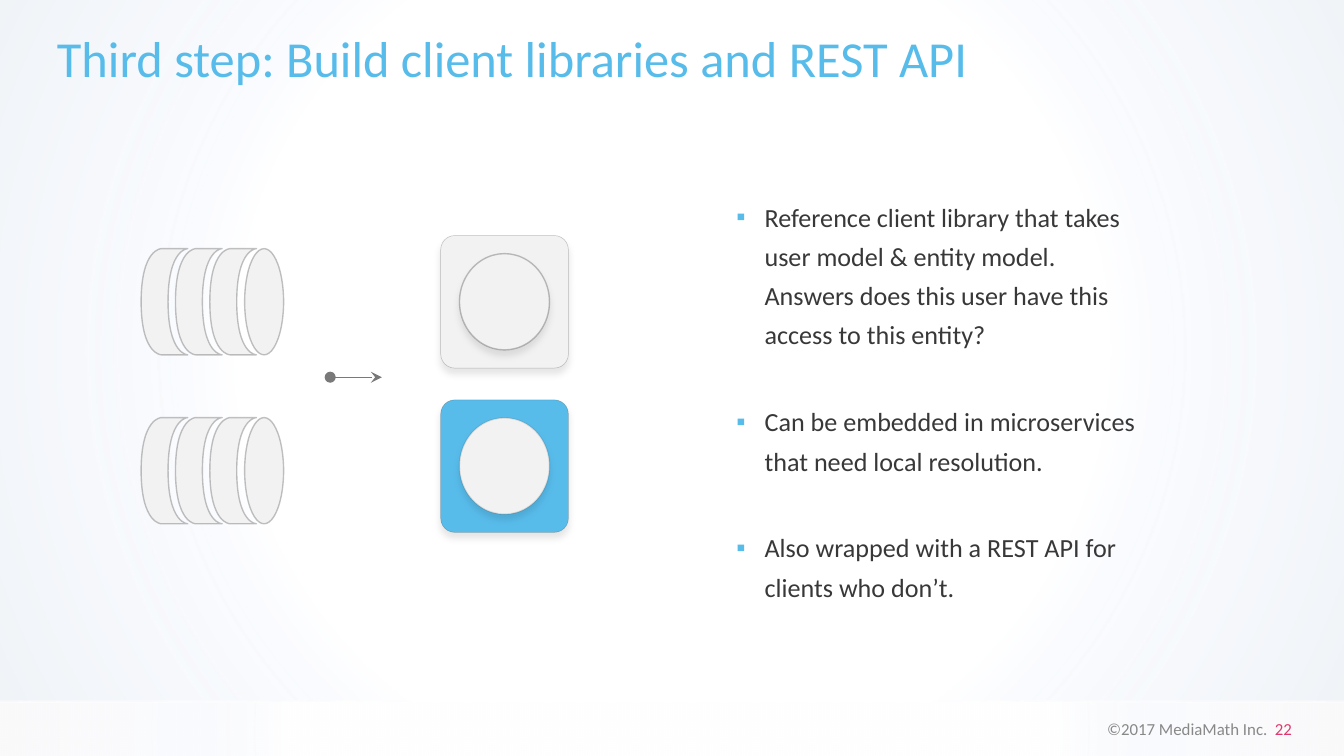
from dataclasses import dataclass
from typing import Any

from lxml.etree import SubElement
from pptx import Presentation
from pptx.dml.color import RGBColor
from pptx.enum.shapes import MSO_CONNECTOR as Link, MSO_SHAPE as Kind
from pptx.enum.text import MSO_ANCHOR as Anchor, PP_ALIGN as Align
from pptx.oxml.ns import qn
from pptx.util import Pt

WHITE = RGBColor(0xFF, 0xFF, 0xFF)
MIST = RGBColor(0xF0, 0xF4, 0xFC)
HAZE = RGBColor(0xE3, 0xEB, 0xF2)
LILAC = RGBColor(0xF0, 0xEE, 0xF2)
PALE = RGBColor(0xF2, 0xF2, 0xF2)
SKY = RGBColor(0x58, 0xBC, 0xEB)
PINK = RGBColor(0xDE, 0x39, 0x6E)
GREY = RGBColor(0x88, 0x88, 0x88)
ARROW = RGBColor(0x79, 0x79, 0x79)
TEXT = RGBColor(0x38, 0x38, 0x38)
EDGE = RGBColor(0x2A, 0x2A, 0x2A)
BLACK = RGBColor(0, 0, 0)

WIDTH, HEIGHT = 720, 405
CYLINDER_TOPS = (133.2, 223.7)
CYLINDER_HEIGHT = 56.9
BAND_LEFT, BAND_STEP, BAND_COUNT, BAND_WIDTH = 75.6, 18.4, 3, 25
POINTS = (
    "Reference client library that takes user model & entity model.  "
    "Answers does this user have this access to this entity?",
    "Can be embedded in microservices that need local resolution.",
    "Also wrapped with a REST API for clients who don’t.",
)


@dataclass(frozen=True)
class Box:
    left: float
    top: float
    width: float
    height: float

    def lengths(self) -> tuple:
        return tuple(Pt(v) for v in (self.left, self.top, self.width, self.height))


@dataclass(frozen=True)
class Stop:
    percent: int
    color: RGBColor
    opacity: int = 100


@dataclass(frozen=True)
class Tile:
    top: float
    fill: RGBColor
    ring_opacity: int


BACKDROPS = (
    (Box(-0.7, 376.5, 720.7, 29.5),
     (Stop(57, WHITE), Stop(78, MIST, 29), Stop(99, LILAC, 30))),
    (Box(-0.7, 0, 720.7, 375.8),
     (Stop(57, WHITE), Stop(78, MIST, 50), Stop(99, HAZE, 50))),
)
TILES = (Tile(126.2, PALE, 31), Tile(214.2, SKY, 15))


def add_color(parent: Any, color: RGBColor, opacity: int) -> None:
    node = SubElement(parent, qn("a:srgbClr"), val=str(color))
    SubElement(node, qn("a:alpha"), val=str(opacity * 1000))


def set_format(target: Any, values: dict) -> None:
    for name, value in values.items():
        setattr(target, name, value)


def add_span(para: Any, text: str, size: float, color: RGBColor) -> None:
    span = para.add_run()
    span.text = text
    set_format(span.font, {"name": "Calibri", "size": Pt(size)})
    span.font.color.rgb = color


def add_backdrop(page: Any, box: Box, stops: tuple[Stop, ...]) -> None:
    """Rectangle with a gradient that spreads from its centre."""
    shape = page.shapes.add_shape(Kind.RECTANGLE, *box.lengths())
    shape.shadow.inherit = False
    shape.line.fill.background()
    shape.fill.background()
    empty = shape._element.spPr.find(qn("a:noFill"))
    gradient = empty.makeelement(qn("a:gradFill"), rotWithShape="1")
    empty.getparent().replace(empty, gradient)
    stop_list = SubElement(gradient, qn("a:gsLst"))
    for stop in stops:
        node = SubElement(stop_list, qn("a:gs"), pos=str(stop.percent * 1000))
        add_color(node, stop.color, stop.opacity)
    circle = SubElement(gradient, qn("a:path"), {"path": "circle"})
    SubElement(circle, qn("a:fillToRect"), l="50000", t="50000", r="50000", b="50000")


def paint(shape: Any, fill: RGBColor, edge: RGBColor, width: float,
          opacity: int, shadow: bool = False) -> None:
    shape.shadow.inherit = False
    shape.fill.solid()
    shape.fill.fore_color.rgb = fill
    shape.line.width = Pt(width)
    shape.line.color.rgb = edge
    properties = shape._element.spPr
    edge_color = properties.find(qn("a:ln")).find(".//" + qn("a:srgbClr"))
    SubElement(edge_color, qn("a:alpha"), val=str(opacity * 1000))
    if shadow:
        outer = SubElement(properties.find(qn("a:effectLst")), qn("a:outerShdw"),
                           blurRad=str(Pt(4)), dist=str(Pt(3)), dir="5400000",
                           algn="t", rotWithShape="0")
        add_color(outer, BLACK, 10)


def bend(shape: Any, first: int) -> None:
    """Turn the three line segments from index first into one cubic curve."""
    lines = list(shape._element.iter(qn("a:lnTo")))[first:first + 3]
    curve = lines[0].makeelement(qn("a:cubicBezTo"))
    lines[0].addprevious(curve)
    for line in lines:
        curve.append(line[0])
        line.getparent().remove(line)


def add_band(page: Any, left: float, top: float) -> None:
    """Upright barrel slice, drawn lying down and turned by 90 degrees."""
    length, middle = CYLINDER_HEIGHT, CYLINDER_HEIGHT / 2
    x0 = left + BAND_WIDTH / 2 - middle
    y0 = top + middle + BAND_WIDTH / 2
    back, front, hollow = 10.8, BAND_WIDTH, 14.4
    outline = [(0, back), (0, front),
               (0, front), (0, hollow), (middle, hollow),
               (length, hollow), (length, front), (length, front),
               (length, back),
               (length, back), (length, 0), (middle, 0),
               (0, 0), (0, back), (0, back)]
    corners = [(Pt(x0 + along), Pt(y0 - across)) for along, across in outline]
    builder = page.shapes.build_freeform(*corners[0])
    builder.add_line_segments(corners[1:], close=True)
    band = builder.convert_to_shape()
    for first in (11, 8, 4, 1):
        bend(band, first)
    band.rotation = 90
    paint(band, PALE, EDGE, 0.75, 28)


def add_cylinder(page: Any, top: float) -> None:
    face = Box(113, top + 18, CYLINDER_HEIGHT, 20.9)
    end = page.shapes.add_shape(Kind.OVAL, *face.lengths())
    end.rotation = 90
    paint(end, PALE, EDGE, 0.75, 28)
    for index in reversed(range(BAND_COUNT)):
        add_band(page, BAND_LEFT + index * BAND_STEP, top)


def add_tile(page: Any, tile: Tile) -> None:
    base = Box(236.1, tile.top, 68.4, 71)
    card = page.shapes.add_shape(Kind.ROUNDED_RECTANGLE, *base.lengths())
    card.adjustments[0] = 0.11
    paint(card, tile.fill, EDGE, 0.25, 28, shadow=True)
    disc = Box(base.left + 10.1, base.top + 9.7, 48.2, 51.6)
    ring = page.shapes.add_shape(Kind.OVAL, *disc.lengths())
    paint(ring, PALE, TEXT, 0.75, tile.ring_opacity, shadow=True)


def add_arrow(page: Any) -> None:
    y = Pt(202.1)
    arrow = page.shapes.add_connector(Link.STRAIGHT, Pt(176.9), y, Pt(204.6), y)
    arrow.line.width = Pt(0.5)
    arrow.line.color.rgb = ARROW
    line = arrow._element.spPr.find(qn("a:ln"))
    SubElement(line, qn("a:headEnd"), type="oval")
    SubElement(line, qn("a:tailEnd"), type="stealth")
    SubElement(arrow._element.spPr, qn("a:effectLst"))


def add_title(page: Any) -> None:
    title = page.shapes.title
    box = Box(23.3, 14.4, 672, 35.3)
    set_format(title, dict(zip(("left", "top", "width", "height"), box.lengths())))
    title.text_frame.vertical_anchor = Anchor.MIDDLE
    para = title.text_frame.paragraphs[0]
    set_format(para, {"alignment": Align.LEFT, "line_spacing": Pt(30)})
    add_span(para, "Third step: Build client libraries and REST API", 27, SKY)


def add_points(page: Any) -> None:
    frame = page.shapes.add_textbox(*Box(385.9, 100.1, 233.3, 228.2).lengths()).text_frame
    frame.word_wrap = True
    for index, text in enumerate(POINTS):
        para = frame.add_paragraph() if index else frame.paragraphs[0]
        set_format(para, {"line_spacing": 1.25, "space_before": Pt(25.5 if index else 0)})
        properties = para._p.get_or_add_pPr()
        properties.set("marL", str(Pt(16.6)))
        properties.set("indent", str(Pt(-15.1)))
        SubElement(SubElement(properties, qn("a:buClr")), qn("a:srgbClr"), val=str(SKY))
        SubElement(properties, qn("a:buFont"), typeface="Arial")
        SubElement(properties, qn("a:buChar"), char="▪")
        add_span(para, text, 14, TEXT)


def add_footer(page: Any) -> None:
    frame = page.shapes.add_textbox(*Box(531.4, 381.6, 167.8, 18).lengths()).text_frame
    frame.word_wrap = True
    para = frame.paragraphs[0]
    para.alignment = Align.RIGHT
    add_span(para, "©2017 MediaMath Inc.  ", 9, GREY)
    add_span(para, "22", 9, PINK)


def main() -> None:
    deck = Presentation()
    set_format(deck, {"slide_width": Pt(WIDTH), "slide_height": Pt(HEIGHT)})
    page = deck.slides.add_slide(deck.slide_layouts.get_by_name("Title Only"))
    for box, stops in BACKDROPS:
        add_backdrop(page, box, stops)
    page.shapes._spTree.append(page.shapes.title._element)
    add_title(page)
    add_footer(page)
    add_points(page)
    add_arrow(page)
    for top in CYLINDER_TOPS:
        add_cylinder(page, top)
    for tile in TILES:
        add_tile(page, tile)
    deck.save("out.pptx")


if __name__ == "__main__":
    main()
